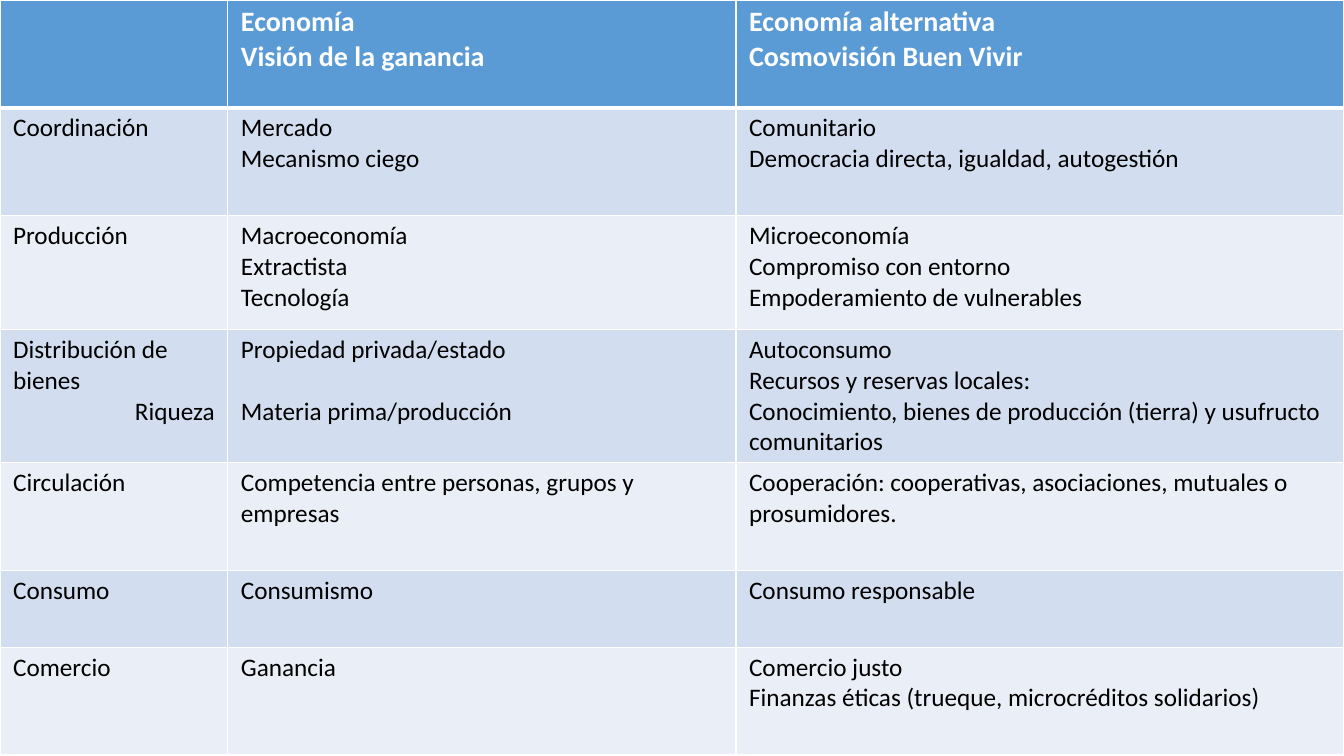
import lxml.etree
import pptx
import pptx.dml.color
import pptx.enum.text
import pptx.oxml.ns
import pptx.util

PX = 9144  # 100 px to the inch
SLIDE_SIZE = (1333, 750)
COLUMN_WIDTHS = [226, 504, 603]
ROW_HEIGHTS = [107, 107, 113, 132, 107, 76, 107]
FONT = "Calibri"
WHITE, BLACK, HEADER_BLUE = "FFFFFF", "000000", "5B9BD5"
BANDS = ["D2DEEF", "EAEFF7"]
BLANK_LAYOUT = 6
LINE_GAP = 22

# Each cell is a list of paragraphs.
ROWS = [
    [[],
     ["Economía", "Visión de la ganancia"],
     ["Economía alternativa", "Cosmovisión Buen Vivir"]],
    [["Coordinación"],
     ["Mercado", "Mecanismo ciego"],
     ["Comunitario", "Democracia directa, igualdad, autogestión"]],
    [["Producción"],
     ["Macroeconomía", "Extractista", "Tecnología"],
     ["Microeconomía", "Compromiso con entorno", "Empoderamiento de vulnerables"]],
    [["Distribución de bienes", "Riqueza"],
     ["Propiedad privada/estado", "Materia prima/producción"],
     ["Autoconsumo", "Recursos y reservas locales:",
      "Conocimiento, bienes de producción (tierra) y usufructo comunitarios"]],
    [["Circulación"],
     ["Competencia entre personas, grupos y empresas"],
     ["Cooperación: cooperativas, asociaciones, mutuales o prosumidores."]],
    [["Consumo"], ["Consumismo"], ["Consumo responsable"]],
    [["Comercio"],
     ["Ganancia"],
     ["Comercio justo", "Finanzas éticas (trueque, microcréditos solidarios)"]],
]
DISTRIBUTION_ROW = 3


def px(length):
    return pptx.util.Emu(length * PX)


def rgb(value):
    return pptx.dml.color.RGBColor.from_string(value)


def set_background(slide):
    fill = slide.background.fill
    fill.gradient()
    fill.gradient_angle = 258
    for stop, position, color in zip(fill.gradient_stops, (0.1, 1), (WHITE, "CDCBCB")):
        stop.position = position
        stop.color.rgb = rgb(color)


def set_borders(cell, top, bottom):
    """Draw white borders; top and bottom are widths in points, the sides are 1."""
    properties = cell._tc.get_or_add_tcPr()
    qn = pptx.oxml.ns.qn
    for tag, width in (("a:lnL", 1), ("a:lnR", 1), ("a:lnT", top), ("a:lnB", bottom)):
        line = lxml.etree.SubElement(properties, qn(tag), w=str(pptx.util.Pt(width)))
        fill = lxml.etree.SubElement(line, qn("a:solidFill"))
        lxml.etree.SubElement(fill, qn("a:srgbClr"), val=WHITE)


def fill_cell(cell, paragraphs, is_header, fill_color):
    cell.margin_left = cell.margin_right = px(13)
    cell.margin_top = cell.margin_bottom = px(5)
    cell.fill.solid()
    cell.fill.fore_color.rgb = rgb(fill_color)
    cell.text = "\n".join(paragraphs)
    for paragraph in cell.text_frame.paragraphs:
        font = paragraph.font
        font.name = FONT
        font.size = pptx.util.Pt(20 if is_header else 18)
        font.bold = is_header
        font.color.rgb = rgb(WHITE if is_header else BLACK)


def add_comparison_table(slide):
    frame = slide.shapes.add_table(
        len(ROW_HEIGHTS), len(COLUMN_WIDTHS), 0, 0,
        px(sum(COLUMN_WIDTHS)), px(sum(ROW_HEIGHTS)))
    table = frame.table
    for column, width in zip(table.columns, COLUMN_WIDTHS):
        column.width = px(width)
    for index, (row, height, texts) in enumerate(zip(table.rows, ROW_HEIGHTS, ROWS)):
        row.height = px(height)
        is_header = index == 0
        fill_color = HEADER_BLUE if is_header else BANDS[(index - 1) % 2]
        for cell, paragraphs in zip(row.cells, texts):
            set_borders(cell, 3 if index == 1 else 1, 3 if is_header else 1)
            fill_cell(cell, paragraphs, is_header, fill_color)
    return table


def main():
    presentation = pptx.Presentation()
    presentation.slide_width, presentation.slide_height = map(px, SLIDE_SIZE)
    slide = presentation.slides.add_slide(presentation.slide_layouts[BLANK_LAYOUT])
    set_background(slide)
    table = add_comparison_table(slide)

    wealth = table.cell(DISTRIBUTION_ROW, 0).text_frame.paragraphs[1]
    wealth.alignment = pptx.enum.text.PP_ALIGN.RIGHT
    raw_material = table.cell(DISTRIBUTION_ROW, 1).text_frame.paragraphs[1]
    raw_material.space_before = pptx.util.Pt(LINE_GAP)

    presentation.save("out.pptx")


if __name__ == "__main__":
    main()
